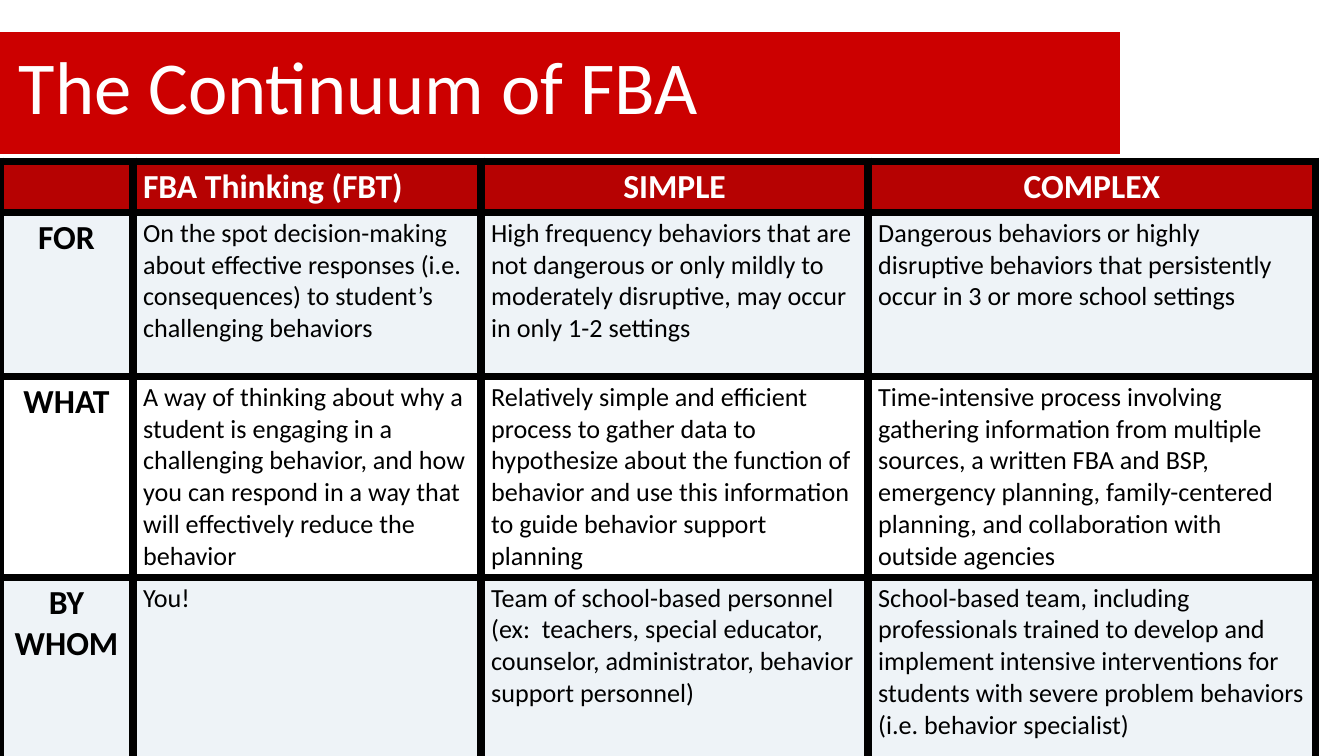
from lxml.etree import SubElement
from pptx import Presentation
from pptx.dml.color import RGBColor
from pptx.enum.shapes import MSO_SHAPE
from pptx.enum.text import MSO_ANCHOR, MSO_AUTO_SIZE, PP_ALIGN
from pptx.oxml.ns import qn
from pptx.util import Inches, Pt

# Content
TITLE = "The Continuum of FBA"
ROWS = [
    ("", "FBA Thinking (FBT)", "SIMPLE", "COMPLEX"),
    ("FOR",
     "On the spot decision-making about effective responses (i.e. consequences) "
     "to student’s challenging behaviors",
     "High frequency behaviors that are not dangerous or only mildly to "
     "moderately disruptive, may occur in only 1-2 settings",
     "Dangerous behaviors or highly disruptive behaviors that persistently "
     "occur in 3 or more school settings"),
    ("WHAT",
     "A way of thinking about why a student is engaging in a challenging behavior, "
     "and how you can respond in a way that will effectively reduce the behavior",
     "Relatively simple and efficient process to gather data to hypothesize about "
     "the function of behavior and use this information to guide behavior support "
     "planning",
     "Time-intensive process involving gathering information from multiple sources, "
     "a written FBA and BSP, emergency planning, family-centered planning, and "
     "collaboration with outside agencies"),
    ("BY WHOM",
     "You!",
     "Team of school-based personnel (ex:  teachers, special educator, counselor, "
     "administrator, behavior support personnel)",
     "School-based team, including professionals trained to develop and implement "
     "intensive interventions for students with severe problem behaviors "
     "(i.e. behavior specialist)"),
]
COL_WIDTHS = [0.99, 2.59, 2.88, 3.33]
ROW_HEIGHTS = [0.37, 1.22, 1.45, 1.39]
MARGIN_SCALE = 0.75  # cell margins, relative to the usual 0.1 and 0.05

# Style
FONT = "Calibri"
RED = RGBColor(0xCC, 0x00, 0x00)
DARK_RED = RGBColor(0xB6, 0x02, 0x02)
PALE_BLUE = RGBColor(0xEE, 0xF3, 0xF7)
WHITE = RGBColor(0xFF, 0xFF, 0xFF)
BLACK = RGBColor(0x00, 0x00, 0x00)


def write(tf, text, size=14, color=BLACK, bold=False, align=PP_ALIGN.LEFT):
    p = tf.paragraphs[0]
    p.alignment = align
    p.font.size = Pt(size)
    if text:
        r = p.add_run()
        r.text = text
        r.font.name = FONT
        r.font.size = Pt(size)
        r.font.bold = bold
        r.font.color.rgb = color


def set_borders(cell, color=BLACK, width=4.5):
    tcPr = cell._tc.get_or_add_tcPr()
    for side in ("a:lnL", "a:lnR", "a:lnT", "a:lnB"):
        ln = SubElement(tcPr, qn(side), w=str(Pt(width)))
        fill = SubElement(ln, qn("a:solidFill"))
        SubElement(fill, qn("a:srgbClr"), val=str(color))


# Slide in 16:9
prs = Presentation()
prs.slide_width = Inches(10)
prs.slide_height = prs.slide_width * 9 // 16
s = prs.slides.add_slide(prs.slide_layouts[5])

# Title band, sent behind the title
band = s.shapes.add_shape(MSO_SHAPE.RECTANGLE, Inches(-0.08), Inches(0.23),
                          Inches(8.42), Inches(0.92))
band.shadow.inherit = False
band.fill.solid()
band.fill.fore_color.rgb = RED
band.line.color.rgb = WHITE
band.line.width = Pt(0.75)
s.shapes._spTree.insert(2, band._element)

# Title
title = s.shapes.title
title.left, title.top = Inches(0.04), Inches(0.31)
title.width, title.height = Inches(8.12), Inches(0.64)
tf = title.text_frame
tf.word_wrap = True
tf.auto_size = MSO_AUTO_SIZE.NONE
tf.vertical_anchor = MSO_ANCHOR.MIDDLE
tf.margin_left = tf.margin_right = tf.margin_top = tf.margin_bottom = Inches(0.1)
write(tf, TITLE, size=40, color=WHITE)

# Comparison table
table = s.shapes.add_table(len(ROWS), len(COL_WIDTHS), Inches(0), Inches(1.2),
                           Inches(sum(COL_WIDTHS)), Inches(sum(ROW_HEIGHTS))).table
for column, width in zip(table.columns, COL_WIDTHS):
    column.width = Inches(width)
for row, height in zip(table.rows, ROW_HEIGHTS):
    row.height = Inches(height)

for i, texts in enumerate(ROWS):
    row_fill = DARK_RED if i == 0 else PALE_BLUE if i % 2 else WHITE
    for j, text in enumerate(texts):
        cell = table.cell(i, j)
        cell.margin_left = cell.margin_right = Inches(0.1 * MARGIN_SCALE)
        cell.margin_top = cell.margin_bottom = Inches(0.05 * MARGIN_SCALE)
        set_borders(cell)
        cell.fill.solid()
        cell.fill.fore_color.rgb = row_fill
        heading = i == 0 or j == 0
        centred = heading and j != 1
        write(cell.text_frame, text, size=18 if heading else 14, bold=heading,
              color=WHITE if i == 0 else BLACK,
              align=PP_ALIGN.CENTER if centred else PP_ALIGN.LEFT)

prs.save("out.pptx")
